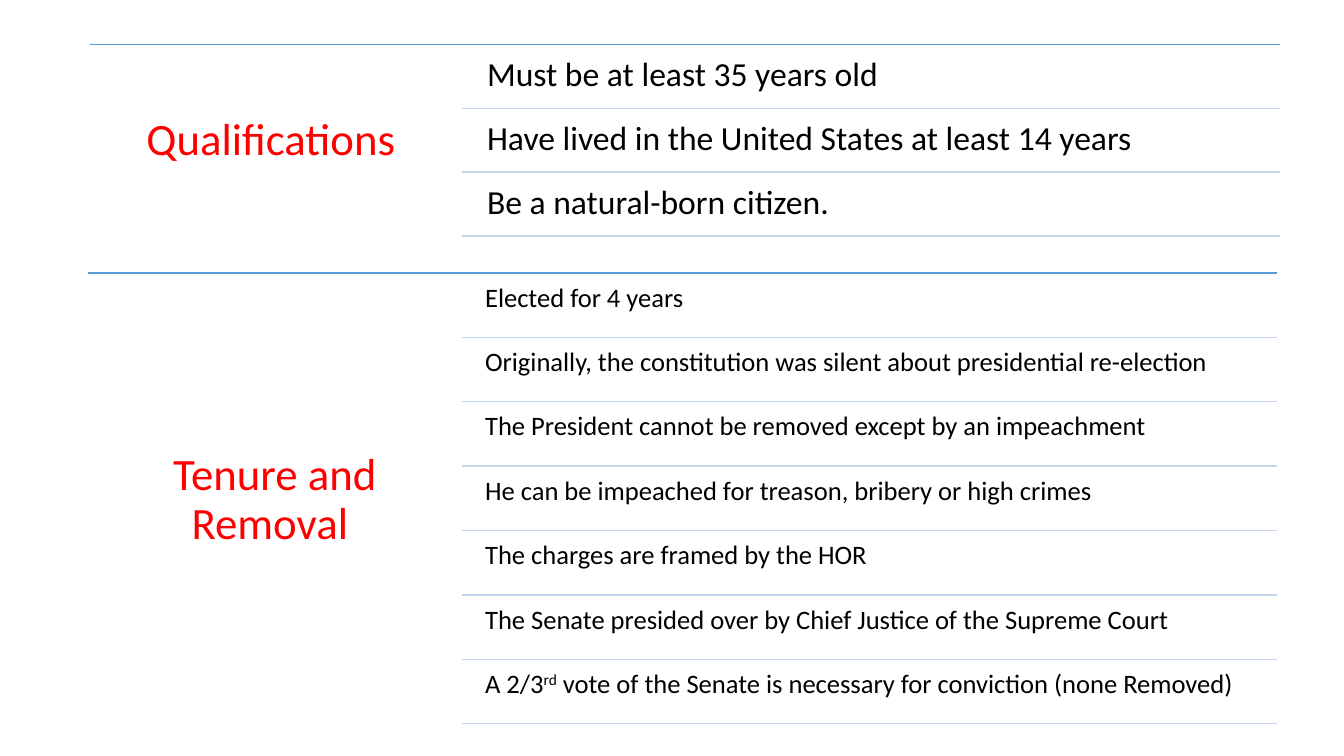
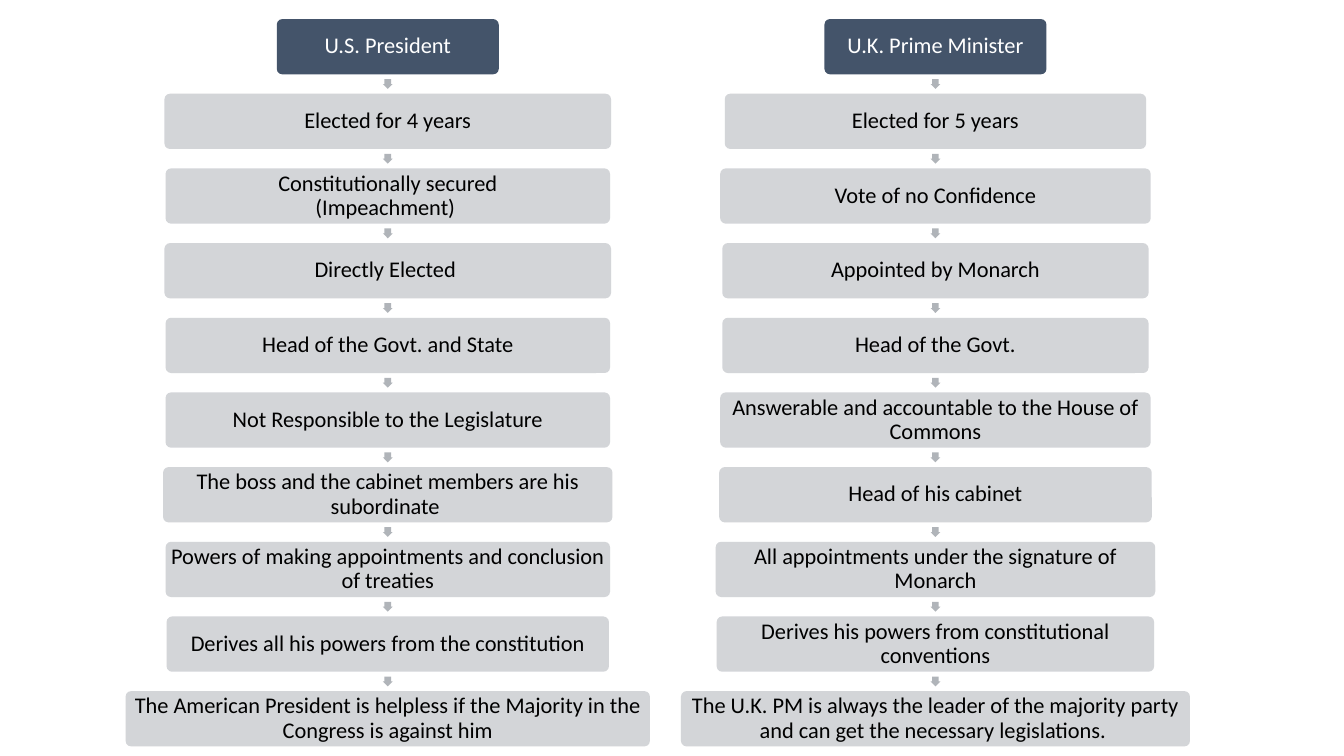
import lxml.etree
import pptx
import pptx.dml.color
import pptx.enum.shapes
import pptx.enum.text
import pptx.oxml.ns
import pptx.util

Pt = pptx.util.Pt
qn = pptx.oxml.ns.qn
SHAPES = pptx.enum.shapes.MSO_SHAPE
ALIGN = pptx.enum.text.PP_ALIGN
ANCHOR = pptx.enum.text.MSO_ANCHOR

COLOURS = {
    "heading": "FF0000",
    "body": "000000",
    "section_rule": "5B9BD5",
    "row_rule": "C4D5EB",
    "office": "44546A",
    "office_text": "FFFFFF",
    "fact": "CFD1D4",
    "arrow": "B0B4B9",
}
FONT = "Calibri"

RULE_LEFT = 330.2
ROW_LEFT = 340.8
ROW_OFFSET = 2.2

STEP_TOP = 13.6
STEP_HEIGHT = 39.5
STEP_PITCH = 53.34
ARROW_SIZE = 7

QUALIFICATIONS = [
    "Must be at least 35 years old",
    "Have lived in the United States at least 14 years",
    "Be a natural-born citizen.",
]
TENURE = [
    "Elected for 4 years",
    "Originally, the constitution was silent about presidential re-election",
    "The President cannot be removed except by an impeachment",
    "He can be impeached for treason, bribery or high crimes",
    "The charges are framed by the HOR",
    "The Senate presided over by Chief Justice of the Supreme Court",
    "A 2/3^rd^ vote of the Senate is necessary for conviction (none Removed)",
]
PRESIDENT = [
    ("U.S. President", 158.6),
    ("Elected for 4 years", 319),
    ("Constitutionally secured\n(Impeachment) ", 317.5),
    ("Directly Elected ", 319),
    ("Head of the Govt. and State", 317.5),
    ("Not Responsible to the Legislature", 317.5),
    ("The boss and the cabinet members are his subordinate ", 321),
    ("Powers of making appointments and conclusion of treaties", 317.5),
    ("Derives all his powers from the constitution", 316),
    ("The American President is helpless if the Majority in the Congress is against him", 374.5),
]
PRIME_MINISTER = [
    ("U.K. Prime Minister", 158.6),
    ("Elected for 5 years", 301),
    ("Vote of no Confidence", 307.5),
    ("Appointed by Monarch", 304.5),
    ("Head of the Govt.", 304.5),
    ("Answerable and accountable to the House of Commons", 307.5),
    ("Head of his cabinet", 309),
    ("All appointments under the signature of Monarch", 314),
    ("Derives his powers from constitutional conventions", 312.5),
    ("The U.K. PM is always the leader of the majority party and can get the necessary legislations. ", 363.6),
]


def rgb(colour):
    return pptx.dml.color.RGBColor.from_string(COLOURS[colour])


def write(shape, text, *, size, colour="body", align=ALIGN.LEFT, anchor=ANCHOR.TOP, inset):
    frame = shape.text_frame
    frame.word_wrap = True
    frame.vertical_anchor = anchor
    frame.margin_left = frame.margin_right = Pt(inset)
    frame.margin_top = frame.margin_bottom = Pt(inset)
    paragraph = frame.paragraphs[0]
    paragraph.alignment = align
    paragraph.line_spacing = 0.9
    for line_index, line in enumerate(text.split("\n")):
        if line_index:
            paragraph.add_line_break()
        for part_index, part in enumerate(line.split("^")):
            run = paragraph.add_run()
            run.text = part
            run.font.name = FONT
            run.font.size = Pt(size)
            run.font.color.rgb = rgb(colour)
            if part_index % 2:
                run._r.get_or_add_rPr().set("baseline", "30000")


def add_label(slide, text, left, top, width, height, **style):
    label = slide.shapes.add_textbox(Pt(left), Pt(top), Pt(width), Pt(height))
    write(label, text, inset=round(style["size"] * 0.3, 1), **style)


def add_rule(slide, left, right, y, colour):
    rule = slide.shapes.add_connector(
        pptx.enum.shapes.MSO_CONNECTOR.STRAIGHT, Pt(left), Pt(y), Pt(right), Pt(y))
    rule.line.color.rgb = rgb(colour)
    rule.line.width = Pt(1)
    lxml.etree.SubElement(rule._element.spPr, qn("a:effectLst"))


def add_block(slide, kind, centre, top, width, height, colour, adjustments, opacity=100):
    block = slide.shapes.add_shape(
        kind, Pt(centre - width / 2), Pt(top), Pt(width), Pt(height))
    block.shadow.inherit = False
    block.fill.solid()
    block.fill.fore_color.rgb = rgb(colour)
    block.line.fill.background()
    for index, value in enumerate(adjustments):
        block.adjustments[index] = value
    if opacity < 100:
        fill_colour = block._element.spPr.find(".//" + qn("a:srgbClr"))
        lxml.etree.SubElement(fill_colour, qn("a:alpha"), val=str(opacity * 1000))
    return block


def add_section(slide, heading, rows, *, left, right, top, height, pitch, size):
    add_rule(slide, left, right, top, "section_rule")
    add_label(slide, heading, left, top, RULE_LEFT - left, height, size=32,
              colour="heading", align=ALIGN.CENTER, anchor=ANCHOR.MIDDLE)
    for index, row in enumerate(rows):
        row_top = top + index * pitch
        add_label(slide, row, ROW_LEFT, row_top + ROW_OFFSET, right - ROW_LEFT,
                  pitch - ROW_OFFSET, size=size)
        add_rule(slide, RULE_LEFT, right, row_top + pitch, "row_rule")


def add_step_column(slide, steps, centre):
    gap = STEP_PITCH - STEP_HEIGHT
    for index, (text, width) in enumerate(steps):
        top = STEP_TOP + index * STEP_PITCH
        fill, ink, opacity = ("fact", "body", 90) if index else ("office", "office_text", 100)
        if index:
            add_block(slide, SHAPES.DOWN_ARROW, centre, top - (gap + ARROW_SIZE) / 2,
                      ARROW_SIZE, ARROW_SIZE, "arrow", (0.67, 0.5))
        step = add_block(slide, SHAPES.ROUNDED_RECTANGLE, centre, top, width,
                         STEP_HEIGHT, fill, (0.1,), opacity)
        write(step, text, size=16, colour=ink, align=ALIGN.CENTER,
              anchor=ANCHOR.MIDDLE, inset=1.3)


def main():
    deck = pptx.Presentation()
    deck.slide_width, deck.slide_height = Pt(960), Pt(540)
    blank = deck.slide_layouts[6]

    presidency = deck.slides.add_slide(blank)
    add_section(presidency, "Qualifications ", QUALIFICATIONS, left=64.2, right=914,
                top=31.8, height=138.2, pitch=45.6, size=24)
    add_section(presidency, "Tenure and Removal ", TENURE, left=62.6, right=912.3,
                top=195, height=324.7, pitch=46, size=19)

    comparison = deck.slides.add_slide(blank)
    add_step_column(comparison, PRESIDENT, 277)
    add_step_column(comparison, PRIME_MINISTER, 668.2)

    deck.save("out.pptx")


if __name__ == "__main__":
    main()
